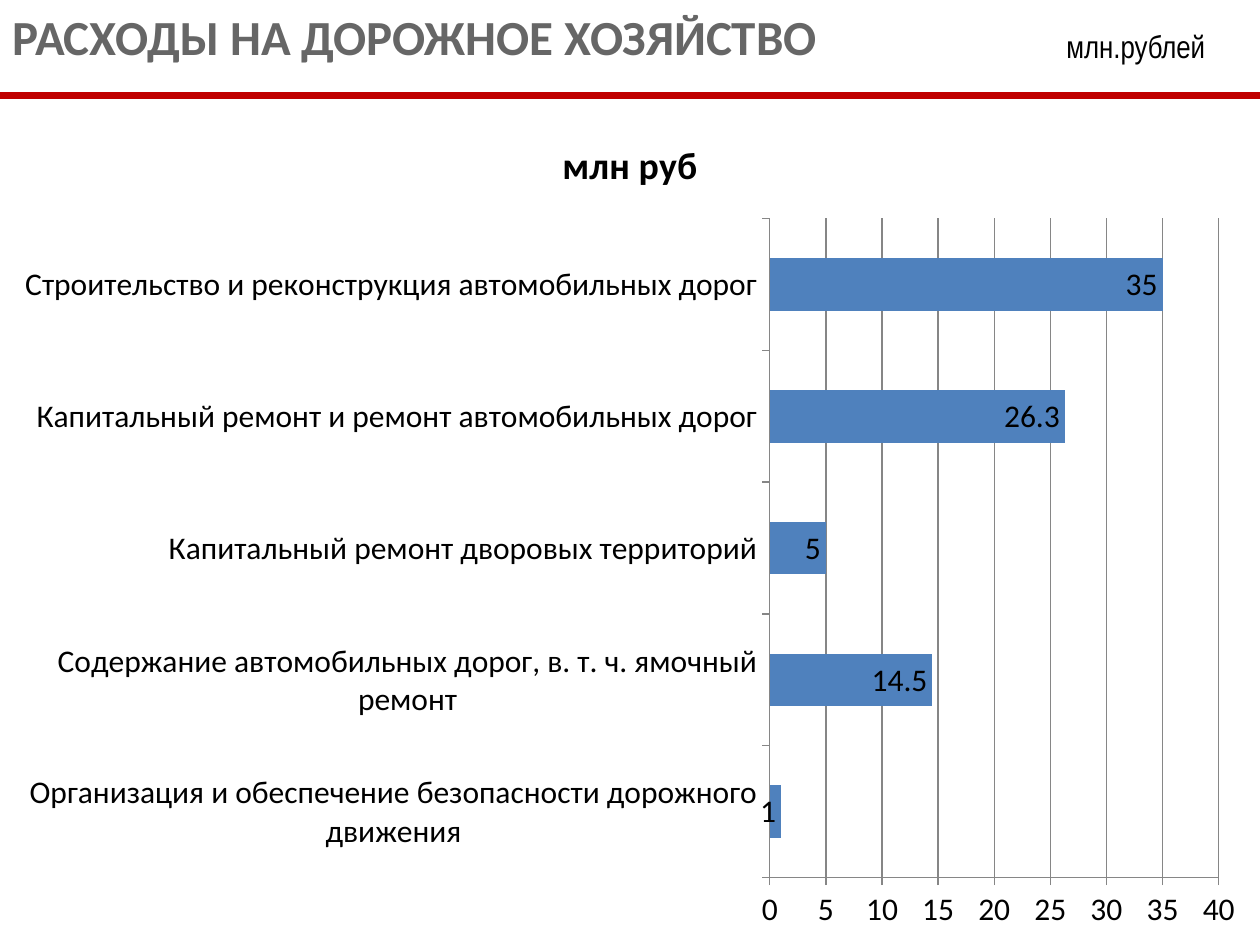
from lxml import etree
from pptx import Presentation
from pptx.chart.data import CategoryChartData
from pptx.dml.color import RGBColor
from pptx.enum.chart import XL_CHART_TYPE, XL_LABEL_POSITION, XL_TICK_MARK
from pptx.enum.shapes import MSO_CONNECTOR
from pptx.enum.text import MSO_ANCHOR, PP_ALIGN
from pptx.oxml.ns import qn
from pptx.util import Inches, Pt

BARS = XL_CHART_TYPE.BAR_STACKED
INSIDE = XL_LABEL_POSITION.INSIDE_END
OUT = XL_TICK_MARK.OUTSIDE
STRAIGHT = MSO_CONNECTOR.STRAIGHT
TOP, MIDDLE = MSO_ANCHOR.TOP, MSO_ANCHOR.MIDDLE
LEFT, CENTER = PP_ALIGN.LEFT, PP_ALIGN.CENTER

COLORS = {"text": "000000", "title": "666666", "rule": "C00000",
          "bar": "4F81BD", "grid": "868686"}

COSTS = {
    "Организация и обеспечение безопасности дорожного движения": 1,
    "Содержание автомобильных дорог, в. т. ч. ямочный ремонт": 14.5,
    "Капитальный ремонт дворовых территорий": 5,
    "Капитальный ремонт и ремонт автомобильных дорог": 26.3,
    "Строительство и реконструкция автомобильных дорог": 35,
}


def color(name):
    return RGBColor.from_string(COLORS[name])


def style(font, size=18, face="Calibri", tone="text", bold=False):
    font.size, font.name, font.bold = Pt(size), face, bold
    font.color.rgb = color(tone)


def write(frame, text, align=LEFT, anchor=TOP, **look):
    frame.word_wrap = True
    frame.vertical_anchor = anchor
    para = frame.paragraphs[0]
    para.alignment = align
    run = para.add_run()
    run.text = text
    style(run.font, **look)


class Page:
    """Holds the slide and draws each kind of element in the shared style."""

    def __init__(self, slide):
        self.shapes = slide.shapes

    def text(self, box, text, **look):
        shape = self.shapes.add_textbox(*map(Inches, box))
        write(shape.text_frame, text, **look)

    def rule(self, top, width):
        line = self.shapes.add_connector(
            STRAIGHT, 0, Inches(top), Inches(10), Inches(top))
        line.line.color.rgb = color("rule")
        line.line.width = Pt(width)
        etree.SubElement(line._element.spPr, qn("a:effectLst"))

    def bars(self, box, title, costs):
        data = CategoryChartData()
        data.categories = list(costs)
        data.add_series(title, list(costs.values()))
        chart = self.shapes.add_chart(BARS, *map(Inches, box), data).chart
        style(chart.font)
        chart.has_legend = False
        chart.has_title = True
        write(chart.chart_title.text_frame, title, align=CENTER,
              size=21.6, bold=True)

        plot = chart.plots[0]
        plot.gap_width, plot.overlap = 150, 100
        plot.vary_by_categories = False
        fill = plot.series[0].format.fill
        fill.solid()
        fill.fore_color.rgb = color("bar")
        plot.has_data_labels = True
        labels = plot.data_labels
        labels.show_value = True
        labels.position = INSIDE
        style(labels.font)

        value = chart.value_axis
        value.has_major_gridlines = True
        for axis in (chart.category_axis, value):
            axis.major_tick_mark = OUT
            style(axis.tick_labels.font)
        for part in (chart.category_axis, value, value.major_gridlines):
            part.format.line.color.rgb = color("grid")
            part.format.line.width = Pt(0.75)


def main():
    deck = Presentation()
    deck.slide_width, deck.slide_height = Inches(10), Inches(7.5)
    page = Page(deck.slides.add_slide(deck.slide_layouts[6]))
    page.text((0, 0, 10, 0.57), "РАСХОДЫ НА ДОРОЖНОЕ ХОЗЯЙСТВО",
              size=28, tone="title", bold=True)
    page.rule(0.76, 4)
    page.text((8.15, 0.21, 1.73, 0.31), "млн.рублей", align=CENTER,
              anchor=MIDDLE, face="Arial Narrow")
    page.bars((0, 0.86, 10, 6.64), "млн руб", COSTS)
    deck.save("out.pptx")


if __name__ == "__main__":
    main()
